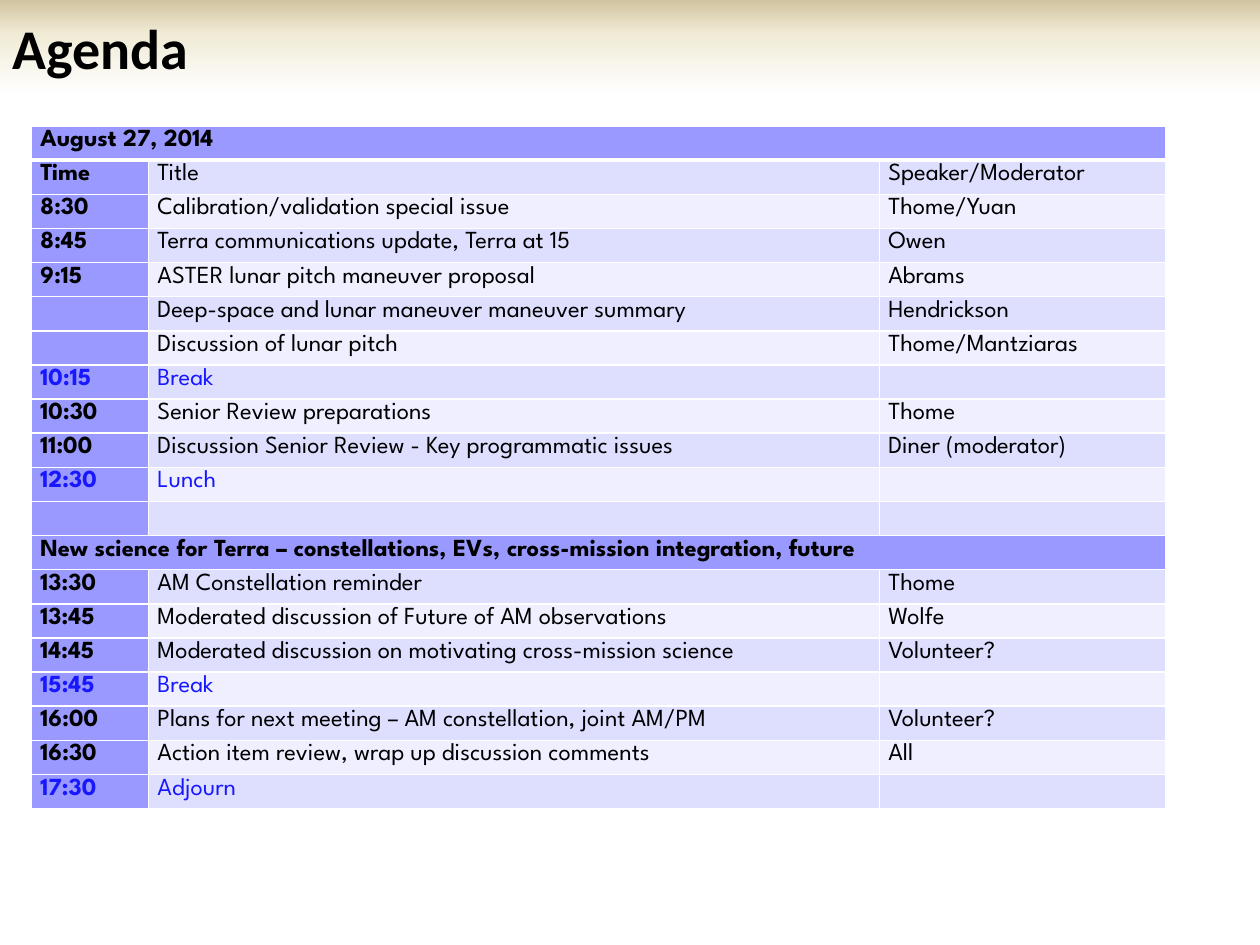
from copy import deepcopy
from dataclasses import dataclass

from lxml import etree
from pptx import Presentation
from pptx import util as u
from pptx.dml.color import RGBColor
from pptx.enum import text
from pptx.oxml import parse_xml
from pptx.oxml.ns import nsdecls, qn


@dataclass(frozen=True)
class Theme:
    title_font: str = "Calibri"
    agenda_font: str = "League Spartan"
    title_size: int = 32
    agenda_size: int = 14
    ink: str = "000000"
    pause: str = "1818FF"
    accent: str = "9999FF"
    bands: tuple = ("EFEFFF", "DEDEFF")
    rule: str = "FFFFFF"
    title_fade: tuple = ((0, "FFFFFF"), (0.65, "F0EBD5"), (1, "D1C39F"))


theme = Theme()
pauses = {"Break", "Lunch", "Adjourn"}
# A row with a single entry is a heading across all columns.
agenda = [
    ("August 27, 2014",),
    ("Time", "Title", "Speaker/Moderator"),
    ("8:30", "Calibration/validation special issue", "Thome/Yuan"),
    ("8:45", "Terra communications update, Terra at 15", "Owen"),
    ("9:15", "ASTER lunar pitch maneuver proposal", "Abrams"),
    ("", "Deep-space and lunar maneuver maneuver summary", "Hendrickson"),
    ("", "Discussion of lunar pitch", "Thome/Mantziaras"),
    ("10:15", "Break", ""),
    ("10:30", "Senior Review preparations", "Thome"),
    ("11:00", "Discussion Senior Review - Key programmatic issues", "Diner (moderator)"),
    ("12:30", "Lunch", ""),
    ("", "", ""),
    ("New science for Terra – constellations, EVs, cross-mission integration, future",),
    ("13:30", "AM Constellation reminder", "Thome"),
    ("13:45", "Moderated discussion of Future of AM observations", "Wolfe"),
    ("14:45", "Moderated discussion on motivating cross-mission science", "Volunteer?"),
    ("15:45", "Break", ""),
    ("16:00", "Plans for next meeting – AM constellation, joint AM/PM", "Volunteer?"),
    ("16:30", "Action item review, wrap up discussion comments", "All"),
    ("17:30", "Adjourn", ""),
]


def set_font(font, color, **values):
    for name, value in values.items():
        setattr(font, name, value)
    font.color.rgb = RGBColor.from_string(color)


def add_borders(cell, widths):
    """Rule the cell's sides; widths maps L, R, T and B, in that order, to points."""
    properties = cell._tc.get_or_add_tcPr()
    for position, (side, width) in enumerate(widths.items()):
        properties.insert(position, parse_xml(
            f'<a:ln{side} {nsdecls("a")} w="{u.Pt(width)}"><a:solidFill>'
            f'<a:srgbClr val="{theme.rule}"/></a:solidFill></a:ln{side}>'))


prs = Presentation()
prs.slide_width, prs.slide_height = u.Inches(10), u.Inches(7.5)
slide = prs.slides.add_slide(prs.slide_layouts[5])

# Agenda table
column_widths = (0.93, 5.8, 2.27)
frame = slide.shapes.add_table(len(agenda), len(column_widths), u.Inches(0.25),
                               u.Inches(1), u.Inches(9), u.Inches(5.42))
schedule = frame.table
for column, width in zip(schedule.columns, column_widths):
    column.width = u.Inches(width)

for row_number, entries in enumerate(agenda):
    schedule.rows[row_number].height = u.Inches(5.42 / len(agenda))
    is_heading = len(entries) == 1
    if is_heading:
        schedule.cell(row_number, 0).merge(schedule.cell(row_number, 2))
    color = theme.pause if pauses & set(entries) else theme.ink
    widths = {"L": 1, "R": 1, "T": 3 if row_number == 1 else 1,
              "B": 3 if row_number == 0 else 1}
    for column_number in range(len(column_widths)):
        cell = schedule.cell(row_number, column_number)
        is_accent = is_heading or column_number == 0
        fill = theme.accent if is_accent else theme.bands[row_number % 2]
        cell.fill.solid()
        cell.fill.fore_color.rgb = RGBColor.from_string(fill)
        add_borders(cell, widths)
        cell.margin_left = cell.margin_right = u.Inches(0.07)
        cell.margin_top = cell.margin_bottom = 0
        paragraph = cell.text_frame.paragraphs[0]
        paragraph.line_spacing = 1.15
        entry = entries[column_number] if column_number < len(entries) else ""
        if entry:
            run = paragraph.add_run()
            run.text = entry
            set_font(run.font, color, name=theme.agenda_font,
                     size=u.Pt(theme.agenda_size), bold=is_accent)
        else:
            # Keeps an empty cell from stretching its row
            end = etree.SubElement(paragraph._p, qn("a:endParaRPr"),
                                   sz=str(theme.agenda_size * 100))
            etree.SubElement(end, qn("a:latin"), typeface=theme.agenda_font)

# Title band
title = slide.shapes.title
title.left, title.top = 0, 0
title.width, title.height = u.Inches(10), u.Inches(0.75)
title.fill.gradient()
title.fill.gradient_angle = 90
stop_list = title._element.spPr.find(qn("a:gradFill")).find(qn("a:gsLst"))
stop_list.append(deepcopy(stop_list[-1]))
for stop, (position, color) in zip(title.fill.gradient_stops, theme.title_fade):
    stop.position = position
    stop.color.rgb = RGBColor.from_string(color)
title.text_frame.text = "Agenda"
title.text_frame.vertical_anchor = text.MSO_ANCHOR.MIDDLE
heading = title.text_frame.paragraphs[0]
heading.alignment = text.PP_ALIGN.LEFT
set_font(heading.runs[0].font, theme.ink, name=theme.title_font,
         size=u.Pt(theme.title_size), bold=True)

prs.save("out.pptx")
